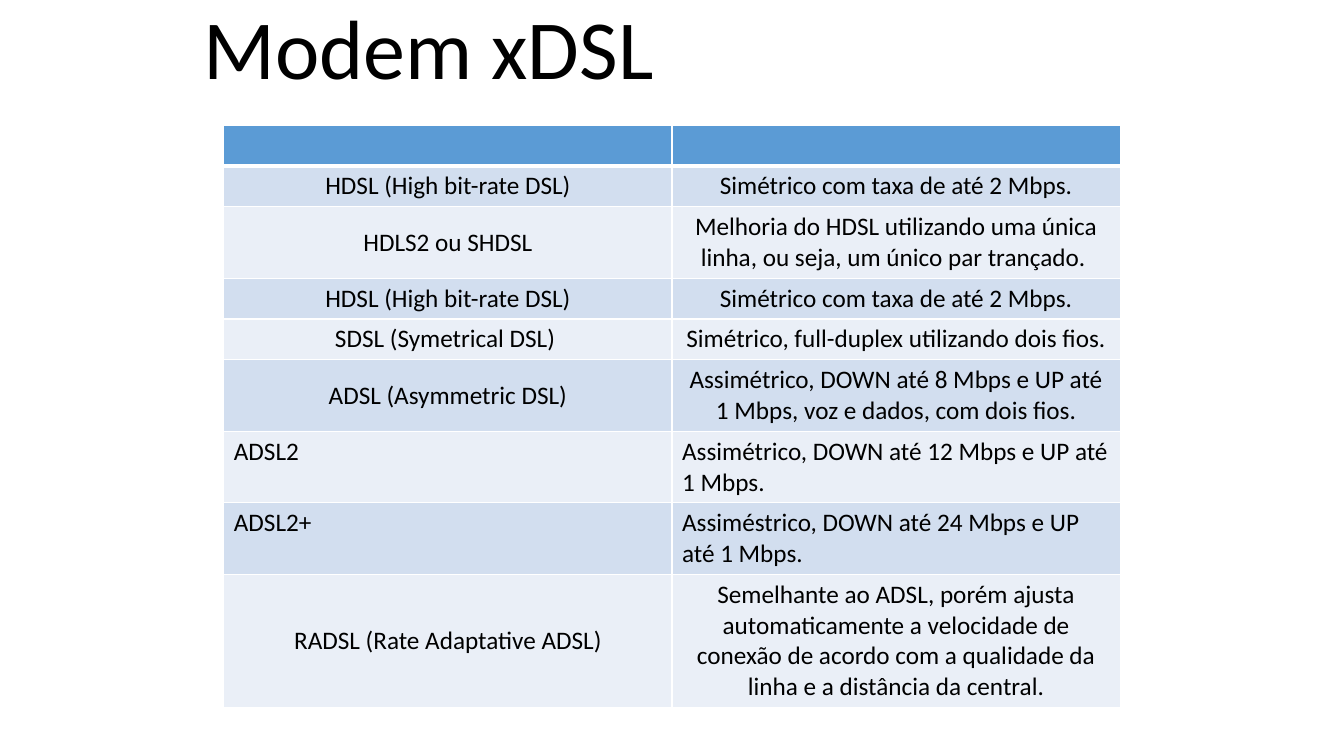
from lxml.etree import SubElement
from pptx import Presentation
from pptx.dml.color import RGBColor
from pptx.enum.text import MSO_ANCHOR, PP_ALIGN
from pptx.oxml.ns import qn
from pptx.util import Inches, Pt

HEADER_FILL = "5B9BD5"
BAND_FILLS = ["D2DEEF", "EAEFF7"]
LINE_HEIGHT, CELL_PADDING = 0.305, 0.1
CENTRED = {"alignment": PP_ALIGN.CENTER, "anchor": MSO_ANCHOR.MIDDLE}
LEFT_TOP = {"alignment": PP_ALIGN.LEFT, "anchor": MSO_ANCHOR.TOP}

# Technology, description, lines of text, placement
MODEMS = [
    ("", "", 1, CENTRED),
    ("HDSL (High bit-rate DSL)", "Simétrico com taxa de até 2 Mbps.", 1, CENTRED),
    ("HDLS2 ou SHDSL",
     "Melhoria do HDSL utilizando uma única linha, ou seja, um único par trançado. ",
     2, CENTRED),
    ("HDSL (High bit-rate DSL)", "Simétrico com taxa de até 2 Mbps.", 1, CENTRED),
    ("SDSL (Symetrical DSL) ", "Simétrico, full-duplex utilizando dois fios.", 1, CENTRED),
    ("ADSL (Asymmetric DSL)",
     "Assimétrico, DOWN até 8 Mbps e UP até 1 Mbps, voz e dados, com dois fios.",
     2, CENTRED),
    ("ADSL2", "Assimétrico, DOWN até 12 Mbps e UP até 1 Mbps.", 2, LEFT_TOP),
    ("ADSL2+", "Assiméstrico, DOWN até 24 Mbps e UP até 1 Mbps.", 2, LEFT_TOP),
    ("RADSL (Rate Adaptative ADSL)",
     "Semelhante ao ADSL, porém ajusta automaticamente a velocidade de conexão "
     "de acordo com a qualidade da linha e a distância da central.", 4, CENTRED),
]


def colour(value):
    return RGBColor.from_string(value)


def apply(target, formats):
    for name, value in formats.items():
        setattr(target, name, value)


def style_font(font, size):
    apply(font, {"name": "Calibri", "size": Pt(size), "bold": False})
    font.color.rgb = colour("000000")


def add_borders(cell, widths):
    properties = cell._tc.get_or_add_tcPr()
    for position, (side, width) in enumerate(widths.items()):
        border = SubElement(properties, qn(f"a:ln{side}"), w=str(Pt(width)))
        fill = SubElement(border, qn("a:solidFill"))
        SubElement(fill, qn("a:srgbClr"), val="FFFFFF")
        properties.insert(position, border)  # borders come before the cell fill


def add_title(slide, left, top, width, height):
    title = slide.shapes.add_textbox(Inches(left), Inches(top), Inches(width), Inches(height))
    apply(title.text_frame, {"word_wrap": True, "vertical_anchor": MSO_ANCHOR.MIDDLE})
    heading = title.text_frame.paragraphs[0]
    apply(heading, {"text": "Modem xDSL", "line_spacing": 0.9})
    style_font(heading.runs[0].font, 60)


def add_modem_table(slide, left, top, width):
    heights = [CELL_PADDING + LINE_HEIGHT * lines for _, _, lines, _ in MODEMS]
    table = slide.shapes.add_table(
        len(MODEMS), 2, Inches(left), Inches(top), Inches(width), Inches(sum(heights))
    ).table
    for row, (technology, description, _, placement) in enumerate(MODEMS):
        table.rows[row].height = Inches(heights[row])
        is_header = row == 0
        for column, text in enumerate((technology, description)):
            cell = table.cell(row, column)
            cell.vertical_anchor = placement["anchor"]
            cell.fill.solid()
            cell.fill.fore_color.rgb = colour(
                HEADER_FILL if is_header else BAND_FILLS[(row - 1) % 2])
            add_borders(cell, {"L": 1, "R": 1, "T": 3 if row == 1 else 1,
                               "B": 3 if is_header else 1})
            paragraph = cell.text_frame.paragraphs[0]
            paragraph.alignment = placement["alignment"]
            if text:
                paragraph.text = text
                style_font(paragraph.runs[0].font, 18)


def main():
    presentation = Presentation()
    apply(presentation, {"slide_width": Inches(13.33), "slide_height": Inches(7.5)})
    slide = presentation.slides.add_slide(presentation.slide_layouts[6])
    add_title(slide, 1.92, -0.11, 9.5, 1.25)
    add_modem_table(slide, 2.22, 1.24, 8.89)
    presentation.save("out.pptx")


if __name__ == "__main__":
    main()
